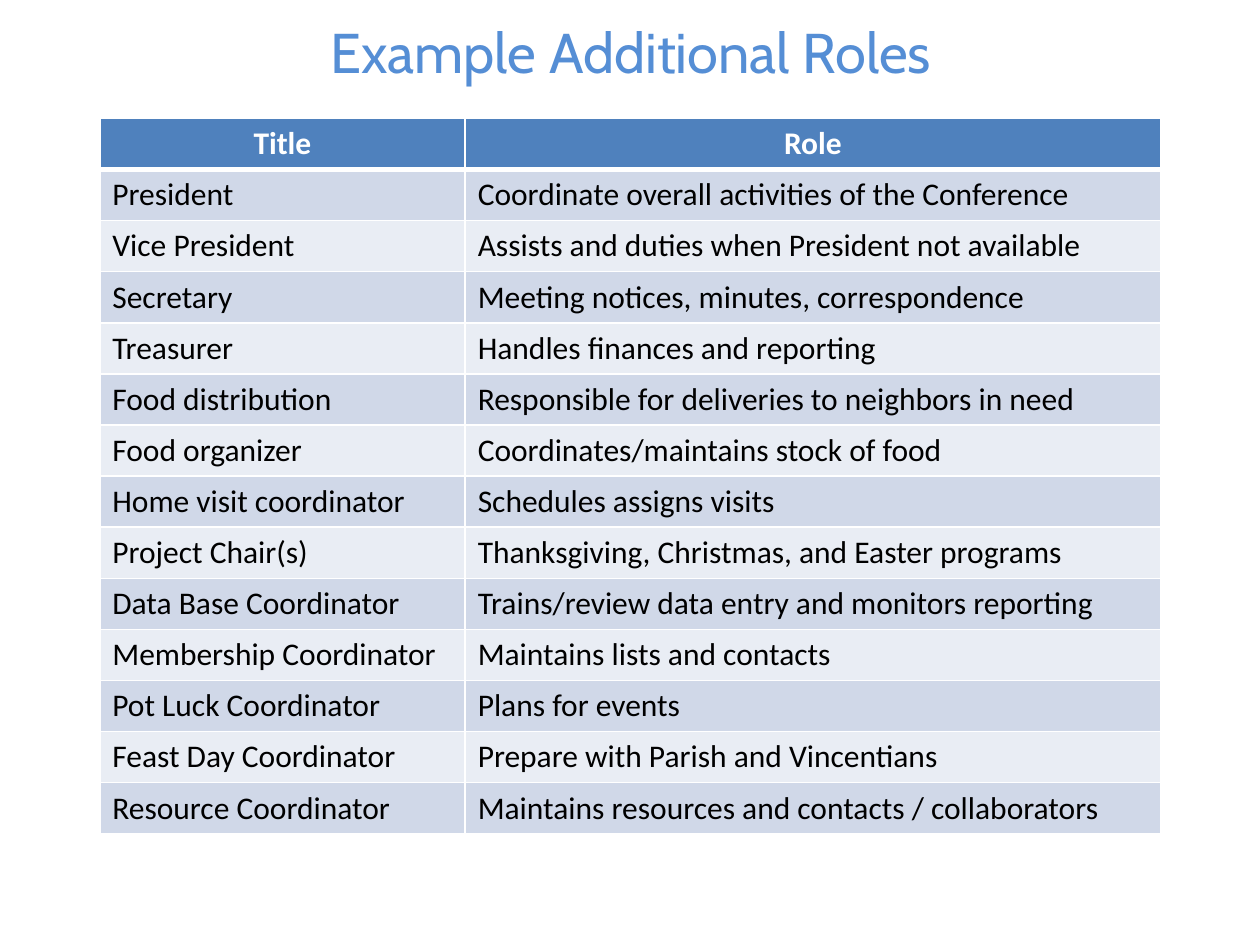
from dataclasses import dataclass

from lxml.etree import SubElement
from pptx import Presentation
from pptx.dml.color import RGBColor
from pptx.enum.text import PP_ALIGN
from pptx.oxml.ns import qn
from pptx.util import Pt


@dataclass(frozen=True)
class Theme:
    title: str = "558ED5"
    head: str = "4F81BD"
    odd: str = "D0D8E8"
    even: str = "E9EDF4"
    white: str = "FFFFFF"
    black: str = "000000"
    title_font: str = "Cabin"
    body_font: str = "Calibri"
    title_size: int = 32
    body_size: int = 18
    thin: int = 1
    thick: int = 3


THEME = Theme()

ROLES = [
    ("Title", "Role"),
    ("President", "Coordinate overall activities of the Conference"),
    ("Vice President", "Assists and duties when President not available"),
    ("Secretary", "Meeting notices, minutes, correspondence"),
    ("Treasurer", "Handles finances and reporting"),
    ("Food distribution", "Responsible for deliveries to neighbors in need"),
    ("Food organizer", "Coordinates/maintains stock of food"),
    ("Home visit coordinator", "Schedules assigns visits"),
    ("Project Chair(s)", "Thanksgiving, Christmas, and Easter programs"),
    ("Data Base Coordinator", "Trains/review data entry and monitors reporting"),
    ("Membership Coordinator", "Maintains lists and contacts"),
    ("Pot Luck Coordinator", "Plans for events"),
    ("Feast Day Coordinator", "Prepare with Parish and Vincentians"),
    ("Resource Coordinator", "Maintains resources and contacts / collaborators"),
]
WIDTHS = (208.8, 397.4)
ROW = 29.2


def add_run(frame, text, font, size, color, bold=False, align=PP_ALIGN.LEFT):
    para = frame.paragraphs[0]
    para.alignment = align
    run = para.add_run()
    run.text = text
    run.font.name = font
    run.font.size = Pt(size)
    run.font.bold = bold
    run.font.color.rgb = RGBColor.from_string(color)


def add_title(slide, text):
    box = slide.shapes.add_textbox(Pt(44), Pt(10.1), Pt(633), Pt(39))
    frame = box.text_frame
    frame.word_wrap = True
    frame.margin_left = frame.margin_right = 0
    frame.margin_top = frame.margin_bottom = 0
    add_run(frame, text, THEME.title_font, THEME.title_size, THEME.title,
            align=PP_ALIGN.CENTER)


def add_edges(cell, top, bottom):
    props = cell._tc.get_or_add_tcPr()
    edges = {"L": THEME.thin, "R": THEME.thin, "T": top, "B": bottom}
    for side, width in edges.items():
        line = SubElement(props, qn(f"a:ln{side}"), w=str(Pt(width)))
        fill = SubElement(line, qn("a:solidFill"))
        SubElement(fill, qn("a:srgbClr"), val=THEME.white)


def fill_cell(cell, text, row):
    head = row == 0
    # Edges come before the fill; a thick rule parts the header from the body
    add_edges(cell, THEME.thick if row == 1 else THEME.thin,
              THEME.thick if head else THEME.thin)
    shade = THEME.head if head else THEME.odd if row % 2 else THEME.even
    cell.fill.solid()
    cell.fill.fore_color.rgb = RGBColor.from_string(shade)
    add_run(cell.text_frame, text, THEME.body_font, THEME.body_size,
            THEME.white if head else THEME.black, head,
            PP_ALIGN.CENTER if head else PP_ALIGN.LEFT)


def add_grid(slide, rows):
    table = slide.shapes.add_table(
        len(rows), len(WIDTHS), Pt(57), Pt(67.7),
        Pt(sum(WIDTHS)), Pt(ROW * len(rows))).table
    for col, width in zip(table.columns, WIDTHS):
        col.width = Pt(width)
    for i, texts in enumerate(rows):
        table.rows[i].height = Pt(ROW)
        for j, text in enumerate(texts):
            fill_cell(table.cell(i, j), text, i)


def main():
    deck = Presentation()
    deck.slide_width, deck.slide_height = Pt(720), Pt(540)
    slide = deck.slides.add_slide(deck.slide_layouts[6])
    # Heading
    add_title(slide, "Example Additional Roles")
    # Table of roles
    add_grid(slide, ROLES)
    deck.save("out.pptx")


if __name__ == "__main__":
    main()
